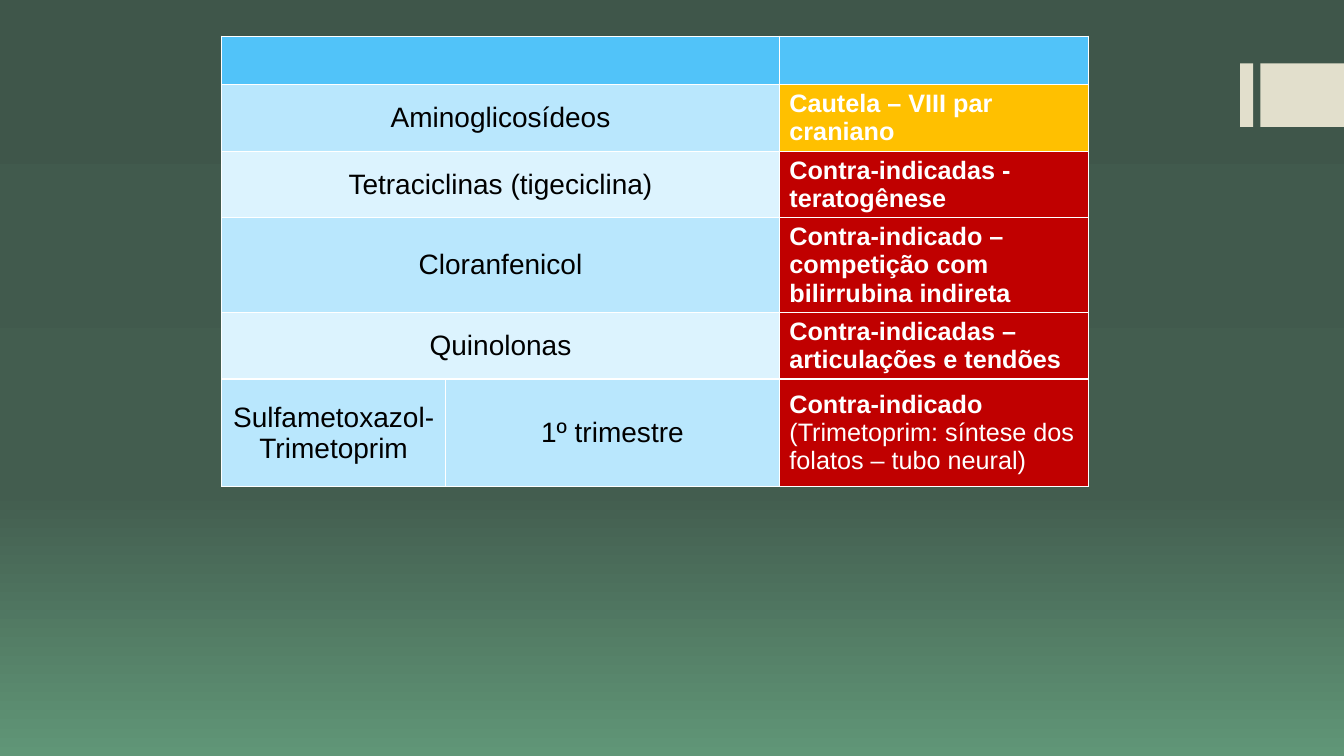
from copy import deepcopy
from dataclasses import dataclass

from lxml.etree import SubElement
from pptx import Presentation
from pptx.dml.color import RGBColor
from pptx.enum.shapes import MSO_SHAPE
from pptx.enum.text import MSO_ANCHOR, PP_ALIGN
from pptx.oxml.ns import qn
from pptx.util import Inches, Pt


@dataclass(frozen=True)
class Theme:
    """Colours, type sizes and font of the slide."""
    backdrop: tuple = ((0, "3F564A"), (0.65, "435D4F"), (1, "609677"))
    accent: str = "E2DFCC"
    header: str = "51C3F9"
    bands: tuple = ("B9E7FD", "DCF3FE")
    caution: str = "FFC000"
    forbidden: str = "C00000"
    dark: str = "000000"
    light: str = "FFFFFF"
    font: str = "Arial"
    drug_size: int = 20
    advice_size: int = 18


THEME = Theme()
COLUMNS = (2.22, 3.31, 3.07)
ROWS = (0.48, 0.66, 0.66, 0.94, 0.66, 1.07)
DRUGS = (
    ("Aminoglicosídeos", "", THEME.caution, (("Cautela – VIII par craniano", True),)),
    ("Tetraciclinas (tigeciclina)", "", THEME.forbidden,
     (("Contra-indicadas - teratogênese", True),)),
    ("Cloranfenicol", "", THEME.forbidden,
     (("Contra-indicado – competição com bilirrubina indireta", True),)),
    ("Quinolonas", "", THEME.forbidden,
     (("Contra-indicadas – articulações e tendões", True),)),
    ("Sulfametoxazol-Trimetoprim", "1º trimestre", THEME.forbidden,
     (("Contra-indicado", True),
      ("(Trimetoprim: síntese dos folatos – tubo neural)", False))),
)


def paint_backdrop(page):
    """Fill the page with the vertical three-stop gradient."""
    fill = page.background.fill
    fill.gradient()
    fill.gradient_angle = 270
    first = fill.gradient_stops[0]._gs
    first.addnext(deepcopy(first))
    for stop, (position, colour) in zip(fill.gradient_stops, THEME.backdrop):
        stop.position = position
        stop.color.rgb = RGBColor.from_string(colour)


def add_side_mark(page, left, top, height):
    """Draw the narrow and wide bars that reach the right edge."""
    for offset, width in ((0, 0.13), (0.2, 0.84)):
        bar = page.shapes.add_shape(
            MSO_SHAPE.RECTANGLE, Inches(left + offset), Inches(top),
            Inches(width), Inches(height))
        bar.shadow.inherit = False
        bar.fill.solid()
        bar.fill.fore_color.rgb = RGBColor.from_string(THEME.accent)
        bar.line.fill.background()


def style_cell(cell, colour):
    """Give a cell its white borders, fill and vertical centring."""
    properties = cell._tc.get_or_add_tcPr()
    for side in ("lnL", "lnR", "lnT", "lnB"):
        line = SubElement(properties, qn(f"a:{side}"), w=str(Pt(1)))
        solid = SubElement(line, qn("a:solidFill"))
        SubElement(solid, qn("a:srgbClr"), val=THEME.light)
    cell.fill.solid()
    cell.fill.fore_color.rgb = RGBColor.from_string(colour)
    cell.vertical_anchor = MSO_ANCHOR.MIDDLE


def write_cell(cell, lines, size, colour, align):
    """Write each (text, bold) pair as a paragraph of the cell."""
    frame = cell.text_frame
    for index, (text, bold) in enumerate(lines):
        para = frame.add_paragraph() if index else frame.paragraphs[0]
        para.alignment = align
        span = para.add_run()
        span.text = text
        span.font.name = THEME.font
        span.font.size = Pt(size)
        span.font.bold = bold
        span.font.color.rgb = RGBColor.from_string(colour)


def add_drug_table(page, left, top):
    """Build the table of antibiotics and their advice in pregnancy."""
    table = page.shapes.add_table(
        len(ROWS), len(COLUMNS), Inches(left), Inches(top),
        Inches(sum(COLUMNS)), Inches(sum(ROWS))).table
    for column, width in zip(table.columns, COLUMNS):
        column.width = Inches(width)
    for row, height in zip(table.rows, ROWS):
        row.height = Inches(height)
    for cell in table.rows[0].cells:
        style_cell(cell, THEME.header)
    table.cell(0, 0).merge(table.cell(0, 1))

    for number, (drug, period, alert, advice) in enumerate(DRUGS, start=1):
        name, term, note = table.rows[number].cells
        band = THEME.bands[(number - 1) % 2]
        for cell, colour in ((name, band), (term, band), (note, alert)):
            style_cell(cell, colour)
        if not period:
            name.merge(term)
        for cell, text in ((name, drug), (term, period)):
            if text:
                write_cell(cell, ((text, False),), THEME.drug_size,
                           THEME.dark, PP_ALIGN.CENTER)
        write_cell(note, advice, THEME.advice_size, THEME.light, PP_ALIGN.LEFT)


def main():
    """Create the deck with its single slide."""
    deck = Presentation()
    deck.slide_width, deck.slide_height = Inches(13.33), Inches(7.5)
    page = deck.slides.add_slide(deck.slide_layouts[6])
    paint_backdrop(page)
    add_side_mark(page, 12.3, 0.63, 0.63)
    add_drug_table(page, 2.2, 0.36)
    deck.save("out.pptx")


if __name__ == "__main__":
    main()
